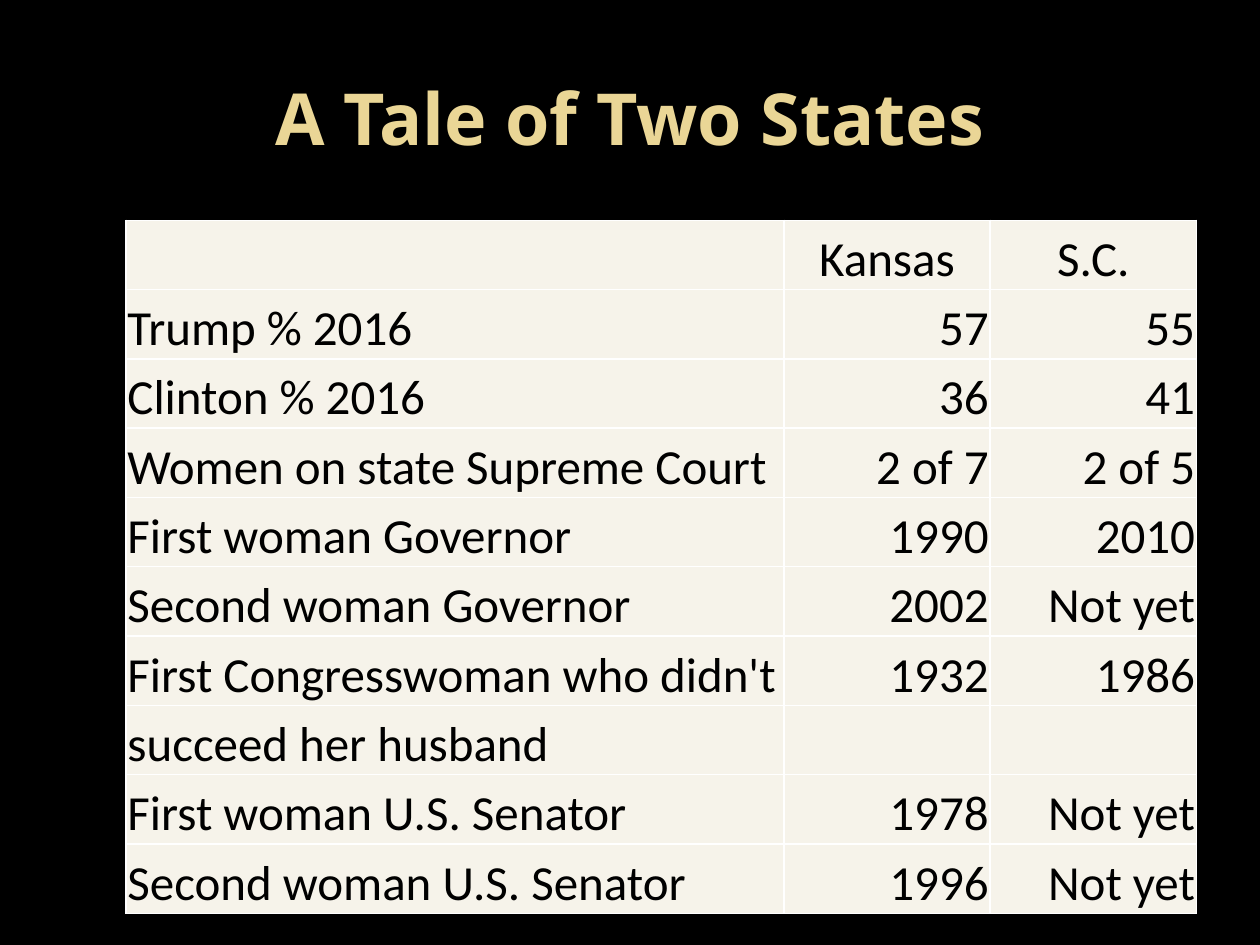
from lxml.etree import SubElement
from pptx import Presentation
from pptx.dml.color import RGBColor
from pptx.enum.text import MSO_ANCHOR, PP_ALIGN
from pptx.oxml.ns import qn
from pptx.util import Cm, Pt

HUES = {"back": "000000", "title": "EAD696", "cell": "F6F3EA",
        "text": "000000", "line": "FFFFFF"}
ROWS = [
    ("", "Kansas", "S.C."),
    ("Trump % 2016", "57", "55"),
    ("Clinton % 2016", "36", "41"),
    ("Women on state Supreme Court", "2 of 7", "2 of 5"),
    ("First woman Governor", "1990", "2010"),
    ("Second woman Governor", "2002", "Not yet"),
    ("First Congresswoman who didn't", "1932", "1986"),
    ("succeed her husband", "", ""),
    ("First woman U.S. Senator", "1978", "Not yet"),
    ("Second woman U.S. Senator", "1996", "Not yet"),
]
WIDTHS = [13.26, 4.16, 4.16]
HIGH = 1.397


def add_run(para, text, face, size, hue, bold=False):
    run = para.add_run()
    run.text = text
    run.font.name = face
    run.font.size = Pt(size)
    run.font.bold = bold
    run.font.color.rgb = RGBColor.from_string(HUES[hue])


def add_edges(cell):
    props = cell._tc.get_or_add_tcPr()
    for side in ("a:lnL", "a:lnR", "a:lnT", "a:lnB"):
        edge = SubElement(props, qn(side), w=str(Pt(1)))
        fill = SubElement(edge, qn("a:solidFill"))
        SubElement(fill, qn("a:srgbClr"), val=HUES["line"])


deck = Presentation()
deck.slide_width, deck.slide_height = Cm(25.4), Cm(19.05)
slide = deck.slides.add_slide(deck.slide_layouts[5])
slide.background.fill.solid()
slide.background.fill.fore_color.rgb = RGBColor.from_string(HUES["back"])

title = slide.shapes.title
title.left, title.top = Cm(1.27), Cm(0.76)
title.width, title.height = Cm(22.86), Cm(3.18)
title.text_frame.vertical_anchor = MSO_ANCHOR.MIDDLE
para = title.text_frame.paragraphs[0]
para.alignment = PP_ALIGN.CENTER
add_run(para, "A Tale of Two States", "Noto Sans", 41, "title", True)

table = slide.shapes.add_table(
    len(ROWS), len(WIDTHS), Cm(2.54), Cm(4.44),
    Cm(sum(WIDTHS)), Cm(HIGH * len(ROWS))).table
for col, width in zip(table.columns, WIDTHS):
    col.width = Cm(width)

for r, row in enumerate(ROWS):
    table.rows[r].height = Cm(HIGH)
    for c, text in enumerate(row):
        cell = table.cell(r, c)
        add_edges(cell)
        cell.fill.solid()
        cell.fill.fore_color.rgb = RGBColor.from_string(HUES["cell"])
        cell.vertical_anchor = MSO_ANCHOR.BOTTOM
        cell.margin_left = cell.margin_right = cell.margin_top = Cm(0.03)
        cell.margin_bottom = Cm(0)
        para = cell.text_frame.paragraphs[0]
        if r == 0:
            para.alignment = PP_ALIGN.CENTER
        else:
            para.alignment = PP_ALIGN.RIGHT if c else PP_ALIGN.LEFT
        if text:
            add_run(para, text, "Calibri", 28, "text")

deck.save("out.pptx")
